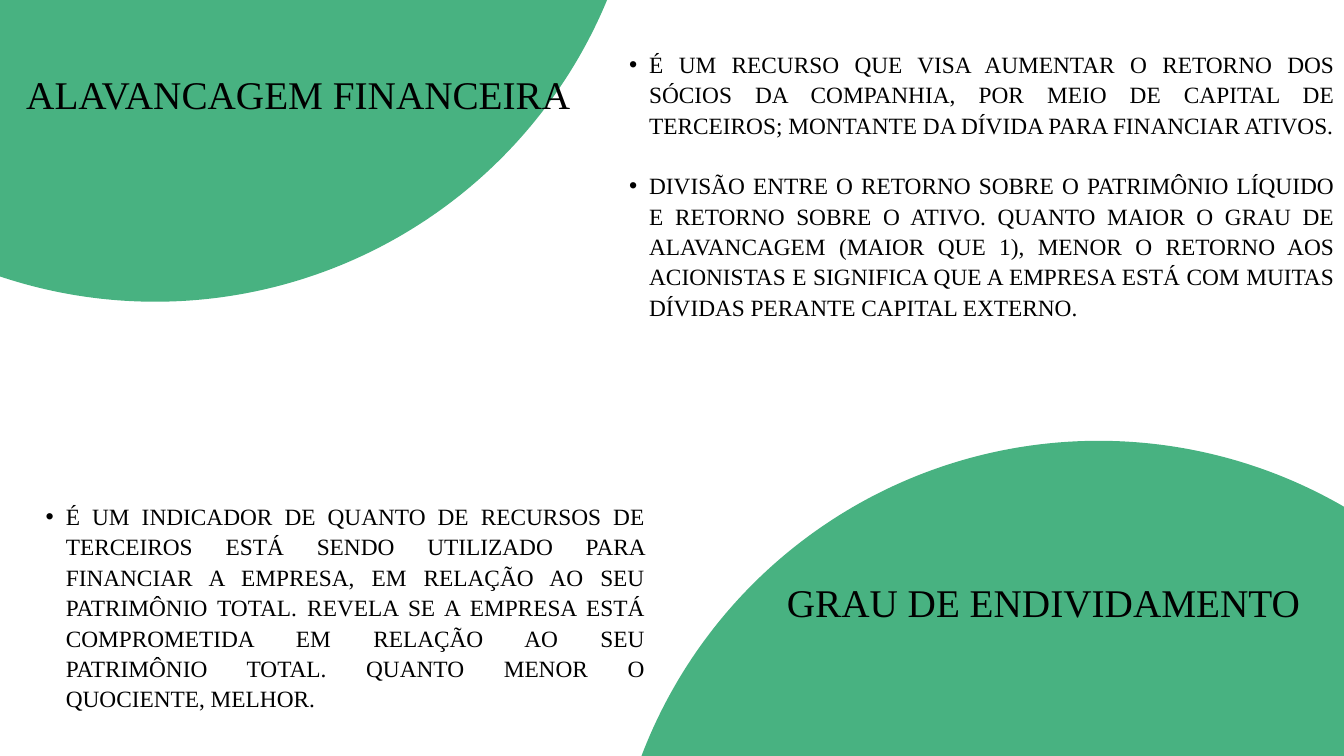
"""Build a slide on financial leverage and degree of indebtedness."""
from lxml.etree import SubElement
from pptx import Presentation
from pptx.dml.color import RGBColor
from pptx.enum.shapes import MSO_SHAPE
from pptx.enum.text import PP_ALIGN
from pptx.oxml.ns import qn
from pptx.util import Inches, Pt


def color(code):
    return RGBColor.from_string(code)


def write(slide, box, texts, size, lead, bullet):
    frame = slide.shapes.add_textbox(*map(Inches, box)).text_frame
    frame.word_wrap = True
    frame.margin_left = frame.margin_right = 0
    frame.margin_top = frame.margin_bottom = 0
    for i, text in enumerate(texts):
        para = frame.paragraphs[0] if i == 0 else frame.add_paragraph()
        para.text = text
        para.line_spacing = Pt(lead)
        if i:
            para.space_before = Pt(lead)
        if bullet:
            para.alignment = PP_ALIGN.JUSTIFY
            para.level = 1
            props = para._p.get_or_add_pPr()
            props.set("marL", str(Inches(0.59)))
            props.set("indent", str(Inches(-0.3)))
            SubElement(props, qn("a:buFont"), typeface="Arial")
            SubElement(props, qn("a:buChar"), char="•")
        font = para.runs[0].font
        font.name = "Times New Roman"
        font.size = Pt(size)
        font.color.rgb = color("000000")


deck = Presentation()
deck.slide_width = Inches(20)
deck.slide_height = Inches(11.25)
slide = deck.slides.add_slide(deck.slide_layouts[6])

side = Inches(14.56)
for left, top in [(-4.97, -10.07), (9.07, 6.56)]:
    disc = slide.shapes.add_shape(
        MSO_SHAPE.OVAL, Inches(left), Inches(top), side, side)
    disc.shadow.inherit = False
    disc.fill.solid()
    disc.fill.fore_color.rgb = color("48B281")
    disc.line.fill.background()

titles = [
    (0.39, 0.99, "ALAVANCAGEM FINANCEIRA"),
    (11.71, 8.55, "GRAU DE ENDIVIDAMENTO"),
]
for left, top, text in titles:
    write(slide, (left, top, 8.13, 1.58), [text], 42, 54.6, False)

bodies = [
    ((9.07, 0.71, 10.78, 4.98), [
        "É UM RECURSO QUE VISA AUMENTAR O RETORNO DOS SÓCIOS DA COMPANHIA, "
        "POR MEIO DE CAPITAL DE TERCEIROS; MONTANTE DA DÍVIDA PARA "
        "FINANCIAR ATIVOS.",
        "DIVISÃO ENTRE O RETORNO SOBRE O PATRIMÔNIO LÍQUIDO E RETORNO SOBRE "
        "O ATIVO. QUANTO MAIOR O GRAU DE ALAVANCAGEM (MAIOR QUE 1), MENOR O "
        "RETORNO AOS ACIONISTAS E SIGNIFICA QUE A EMPRESA ESTÁ COM MUITAS "
        "DÍVIDAS PERANTE CAPITAL EXTERNO.",
    ]),
    ((0.39, 7.44, 9.2, 3.63), [
        "É UM INDICADOR DE QUANTO DE RECURSOS DE TERCEIROS ESTÁ SENDO "
        "UTILIZADO PARA FINANCIAR A EMPRESA, EM RELAÇÃO AO SEU PATRIMÔNIO "
        "TOTAL. REVELA SE A EMPRESA ESTÁ COMPROMETIDA EM RELAÇÃO AO SEU "
        "PATRIMÔNIO TOTAL. QUANTO MENOR O QUOCIENTE, MELHOR.",
    ]),
]
for box, texts in bodies:
    write(slide, box, texts, 25, 32.5, True)

deck.save("out.pptx")
